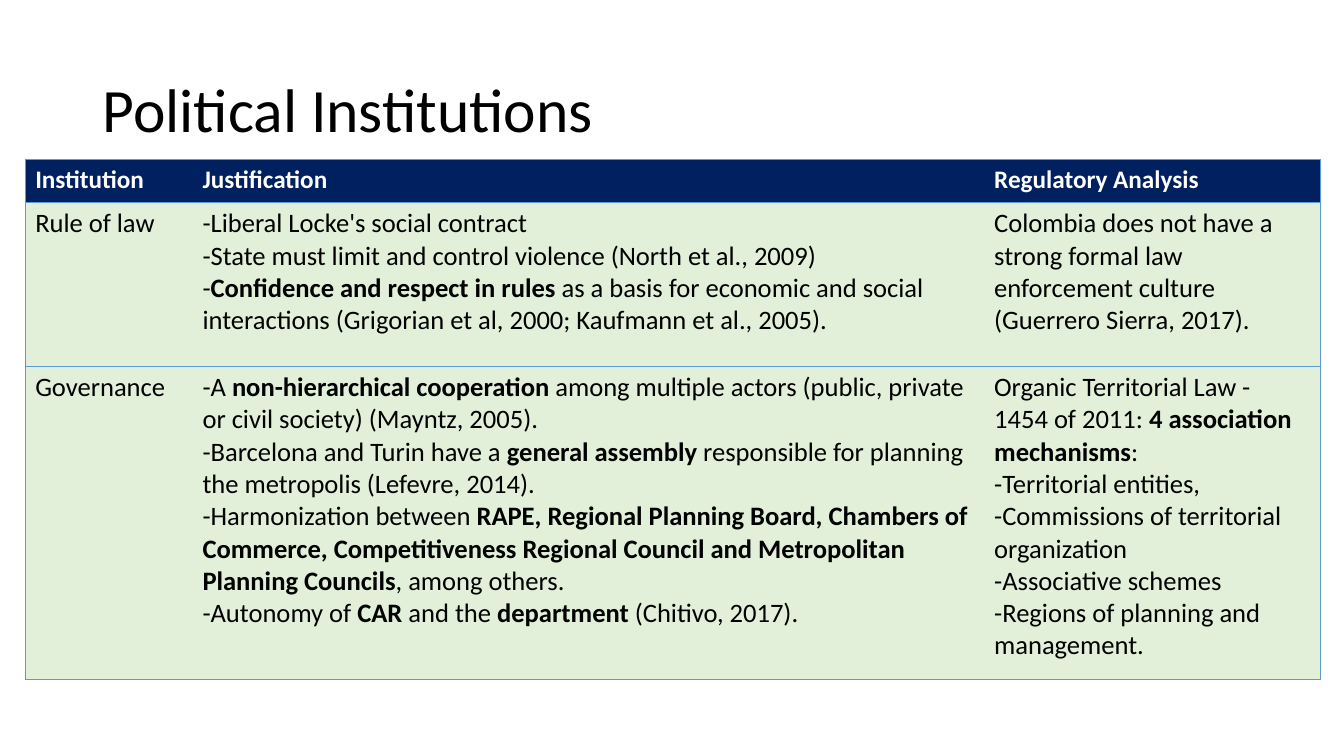
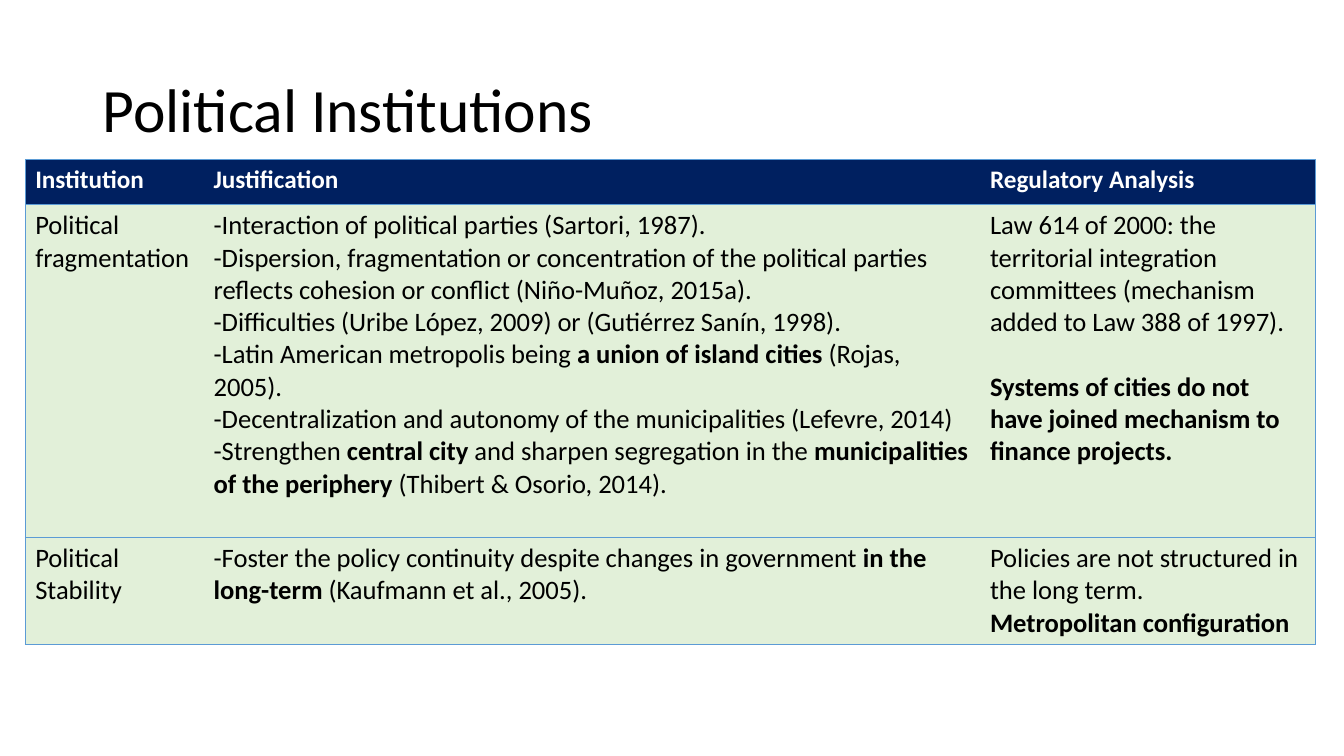
import dataclasses
import typing

import lxml.etree
import pptx
import pptx.dml.color
import pptx.enum.text
import pptx.oxml.ns
import pptx.util

Pt = pptx.util.Pt
FONT = "Calibri"
COLORS = {
    "black": "000000",
    "white": "FFFFFF",
    "navy": "002060",
    "mint": "E2F0D9",
    "border": "5B9BD5",
}
TITLE = "Political Institutions"
HEADER = ("Institution", "Justification", "Regulatory Analysis")
LEFT, TOP = 18, 113.8


@dataclasses.dataclass(frozen=True)
class Para:
    text: str
    before: float = 0


@dataclasses.dataclass(frozen=True)
class Row:
    height: float
    cells: tuple[list[Para], ...]


@dataclasses.dataclass(frozen=True)
class TableSlide:
    widths: tuple[float, ...]
    header_height: float
    rows: tuple[Row, ...]


def paras(*texts: str) -> list[Para]:
    return [Para(text) for text in texts]


SLIDES = (
    TableSlide(
        (119.5, 565.5, 240.2),
        31,
        (
            Row(117, (
                paras("Rule of law"),
                paras(
                    "-Liberal Locke's social contract",
                    "-State must limit and control violence (North et al., 2009)",
                    "-**Confidence and respect in rules **as a basis for economic and social "
                    "interactions (Grigorian et al, 2000; Kaufmann et al., 2005).",
                ),
                paras("Colombia does not have a strong formal law enforcement culture "
                      "(Guerrero Sierra, 2017)."),
            )),
            Row(223.5, (
                paras("Governance"),
                paras(
                    "-A **non-hierarchical cooperation **among multiple actors (public, private "
                    "or civil society) (Mayntz, 2005).",
                    "-Barcelona and Turin have a **general assembly **responsible for planning "
                    "the metropolis (Lefevre, 2014).",
                    "-Harmonization between **RAPE, Regional Planning Board, Chambers of "
                    "Commerce, Competitiveness Regional Council and Metropolitan Planning "
                    "Councils**, among others.",
                    "-Autonomy of **CAR** and the **department** (Chitivo, 2017).",
                ),
                paras(
                    "Organic Territorial Law - 1454 of 2011: **4 association mechanisms**:",
                    "-Territorial entities,",
                    "-Commissions of territorial organization",
                    "-Associative schemes",
                    "-Regions of planning and management.",
                ),
            )),
        ),
    ),
    TableSlide(
        (127.4, 554.6, 239.6),
        32.4,
        (
            Row(237.6, (
                paras("Political fragmentation"),
                paras(
                    "-Interaction of political parties (Sartori, 1987).",
                    "-Dispersion, fragmentation or concentration of the political parties "
                    "reflects cohesion or conflict (Niño-Muñoz, 2015a).",
                    "-Difficulties (Uribe López, 2009) or (Gutiérrez Sanín, 1998).",
                    "-Latin American metropolis being **a union of island cities **(Rojas, 2005).",
                    "-Decentralization and autonomy of the municipalities (Lefevre, 2014)",
                    "-Strengthen **central city** and sharpen segregation in the "
                    "**municipalities of the periphery **(Thibert & Osorio, 2014).",
                ),
                [
                    Para("Law 614 of 2000: the territorial integration committees "
                         "(mechanism added to Law 388 of 1997)."),
                    Para("**Systems of cities do not have joined mechanism to finance "
                         "projects.**", 23),
                ],
            )),
            Row(76, (
                paras("Political Stability"),
                paras("-Foster the policy continuity despite changes in government "
                      "**in the long-term** (Kaufmann et al., 2005)."),
                paras("Policies are not structured in the long term.",
                      "**Metropolitan configuration**"),
            )),
        ),
    ),
)


def rgb(color: str) -> pptx.dml.color.RGBColor:
    return pptx.dml.color.RGBColor.from_string(COLORS[color])


def add_run(p: typing.Any, text: str, size: float, color: str, bold: bool = False) -> None:
    r = p.add_run()
    r.text = text
    r.font.name = FONT
    r.font.size = Pt(size)
    r.font.bold = bold
    r.font.color.rgb = rgb(color)


def add_title(s: typing.Any) -> None:
    sp = s.shapes.title
    sp.left, sp.top, sp.width, sp.height = Pt(66), Pt(46.8), Pt(828), Pt(67)
    tf = sp.text_frame
    tf.word_wrap = True
    tf.auto_size = pptx.enum.text.MSO_AUTO_SIZE.NONE
    tf.vertical_anchor = pptx.enum.text.MSO_ANCHOR.MIDDLE
    p = tf.paragraphs[0]
    p.alignment = pptx.enum.text.PP_ALIGN.LEFT
    p.line_spacing = 0.9
    add_run(p, TITLE, 44, "black")


def set_borders(cell: typing.Any, edges: dict[str, bool]) -> None:
    qn = pptx.oxml.ns.qn
    tc_pr = cell._tc.get_or_add_tcPr()
    for side, shown in edges.items():
        ln = lxml.etree.SubElement(tc_pr, qn(f"a:ln{side}"), w=str(Pt(0.5)))
        if shown:
            fill = lxml.etree.SubElement(ln, qn("a:solidFill"))
            lxml.etree.SubElement(fill, qn("a:srgbClr"), val=COLORS["border"])
        else:
            lxml.etree.SubElement(ln, qn("a:noFill"))


def fill_cell(cell: typing.Any, content: list[Para], is_header: bool) -> None:
    cell.fill.solid()
    cell.fill.fore_color.rgb = rgb("navy" if is_header else "mint")
    size, color = (18, "white") if is_header else (19, "black")
    tf = cell.text_frame
    for i, para in enumerate(content):
        p = tf.paragraphs[0] if i == 0 else tf.add_paragraph()
        if para.before:
            p.space_before = Pt(para.before)
        for part, text in enumerate(para.text.split("**")):
            if text:
                add_run(p, text, size, color, is_header or part % 2 == 1)


def add_institutions(s: typing.Any, spec: TableSlide) -> None:
    header = Row(spec.header_height, tuple(paras(text) for text in HEADER))
    rows = (header, *spec.rows)
    table = s.shapes.add_table(
        len(rows), len(HEADER), Pt(LEFT), Pt(TOP),
        Pt(sum(spec.widths)), Pt(sum(row.height for row in rows)),
    ).table
    for column, width in zip(table.columns, spec.widths):
        column.width = Pt(width)
    for i, row in enumerate(rows):
        table.rows[i].height = Pt(row.height)
        for j, content in enumerate(row.cells):
            cell = table.cell(i, j)
            last = j == len(HEADER) - 1
            set_borders(cell, {"L": j == 0, "R": last, "T": True, "B": True})
            fill_cell(cell, content, i == 0)


def main() -> None:
    prs = pptx.Presentation()
    prs.slide_width, prs.slide_height = Pt(960), Pt(540)
    for spec in SLIDES:
        s = prs.slides.add_slide(prs.slide_layouts[5])
        add_title(s)
        add_institutions(s, spec)
    prs.save("out.pptx")


if __name__ == "__main__":
    main()
